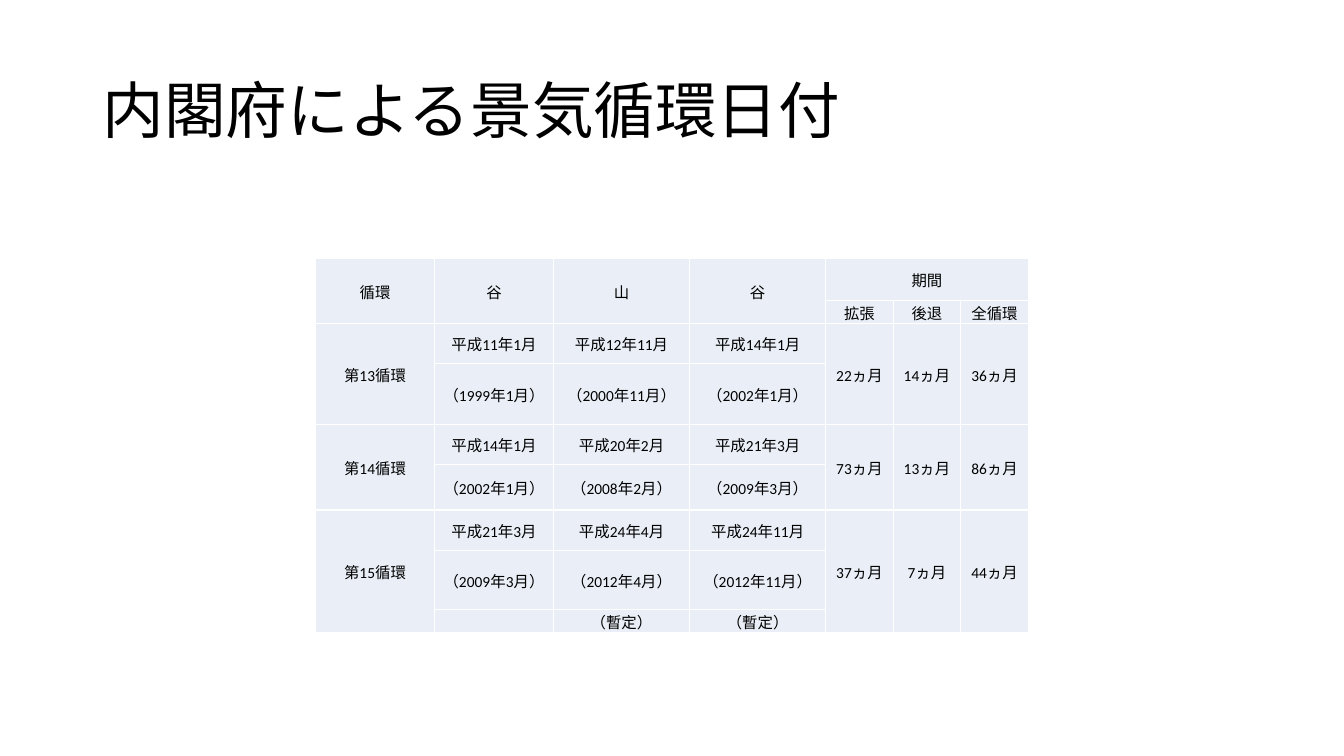
from pptx import Presentation
from pptx.dml.color import RGBColor
from pptx.enum.text import MSO_ANCHOR, PP_ALIGN
from pptx.util import Inches, Pt

BLACK = RGBColor(0x00, 0x00, 0x00)
PALE_BLUE = RGBColor(0xEA, 0xEF, 0xF7)
FONT = "Calibri"

COL_WIDTHS = [1.18, 1.18, 1.35, 1.35, 0.67, 0.67, 0.67]
ROW_HEIGHTS = [0.42, 0.23, 0.4, 0.6, 0.4, 0.45, 0.4, 0.59, 0.23]
ROWS = [
    ["循環", "谷", "山", "谷", "期間", "", ""],
    ["", "", "", "", "拡張", "後退", "全循環"],
    ["第13循環", "平成11年1月", "平成12年11月", "平成14年1月", "22ヵ月", "14ヵ月", "36ヵ月"],
    ["", "（1999年1月）", "（2000年11月）", "（2002年1月）", "", "", ""],
    ["第14循環", "平成14年1月", "平成20年2月", "平成21年3月", "73ヵ月", "13ヵ月", "86ヵ月"],
    ["", "（2002年1月）", "（2008年2月）", "（2009年3月）", "", "", ""],
    ["第15循環", "平成21年3月", "平成24年4月", "平成24年11月", "37ヵ月", "7ヵ月", "44ヵ月"],
    ["", "（2009年3月）", "（2012年4月）", "（2012年11月）", "", "", ""],
    ["", "", "（暫定）", "（暫定）", "", "", ""],
]
CYCLE_ROWS = [(2, 3), (4, 5), (6, 8)]  # first and last row of each cycle


def set_font(p, size):
    p.font.name = FONT
    p.font.size = Pt(size)
    p.font.color.rgb = BLACK


prs = Presentation()
prs.slide_width, prs.slide_height = Inches(13.33), Inches(7.5)
s = prs.slides.add_slide(prs.slide_layouts[6])

# Title
title = s.shapes.add_textbox(Inches(0.92), Inches(0.4), Inches(11.5), Inches(1.45))
tf = title.text_frame
tf.word_wrap = True
tf.vertical_anchor = MSO_ANCHOR.MIDDLE
p = tf.paragraphs[0]
p.text = "内閣府による景気循環日付"
p.line_spacing = 0.9
set_font(p, 44)

# Table of business cycle dates; the default style draws its white rules
table = s.shapes.add_table(
    len(ROWS), len(COL_WIDTHS), Inches(3.13), Inches(2.56),
    Inches(sum(COL_WIDTHS)), Inches(sum(ROW_HEIGHTS))).table
table.first_row = False
table.horz_banding = False
for column, width in zip(table.columns, COL_WIDTHS):
    column.width = Inches(width)
for row, height in zip(table.rows, ROW_HEIGHTS):
    row.height = Inches(height)

for row, texts in zip(table.rows, ROWS):
    for cell, label in zip(row.cells, texts):
        cell.fill.solid()
        cell.fill.fore_color.rgb = PALE_BLUE
        cell.margin_left = cell.margin_right = cell.margin_top = Inches(0.01)
        cell.margin_bottom = 0
        cell.vertical_anchor = MSO_ANCHOR.MIDDLE
        p = cell.text_frame.paragraphs[0]
        p.alignment = PP_ALIGN.CENTER
        set_font(p, 11)
        if label:
            p.text = label
        else:
            # An empty cell takes its line height from the end-of-paragraph mark
            p._p.get_or_add_endParaRPr().set("sz", "1100")

# Merged cells
for col in range(4):
    table.cell(0, col).merge(table.cell(1, col))
table.cell(0, 4).merge(table.cell(0, 6))
for first, last in CYCLE_ROWS:
    for col in (0, 4, 5, 6):
        table.cell(first, col).merge(table.cell(last, col))

prs.save("out.pptx")
